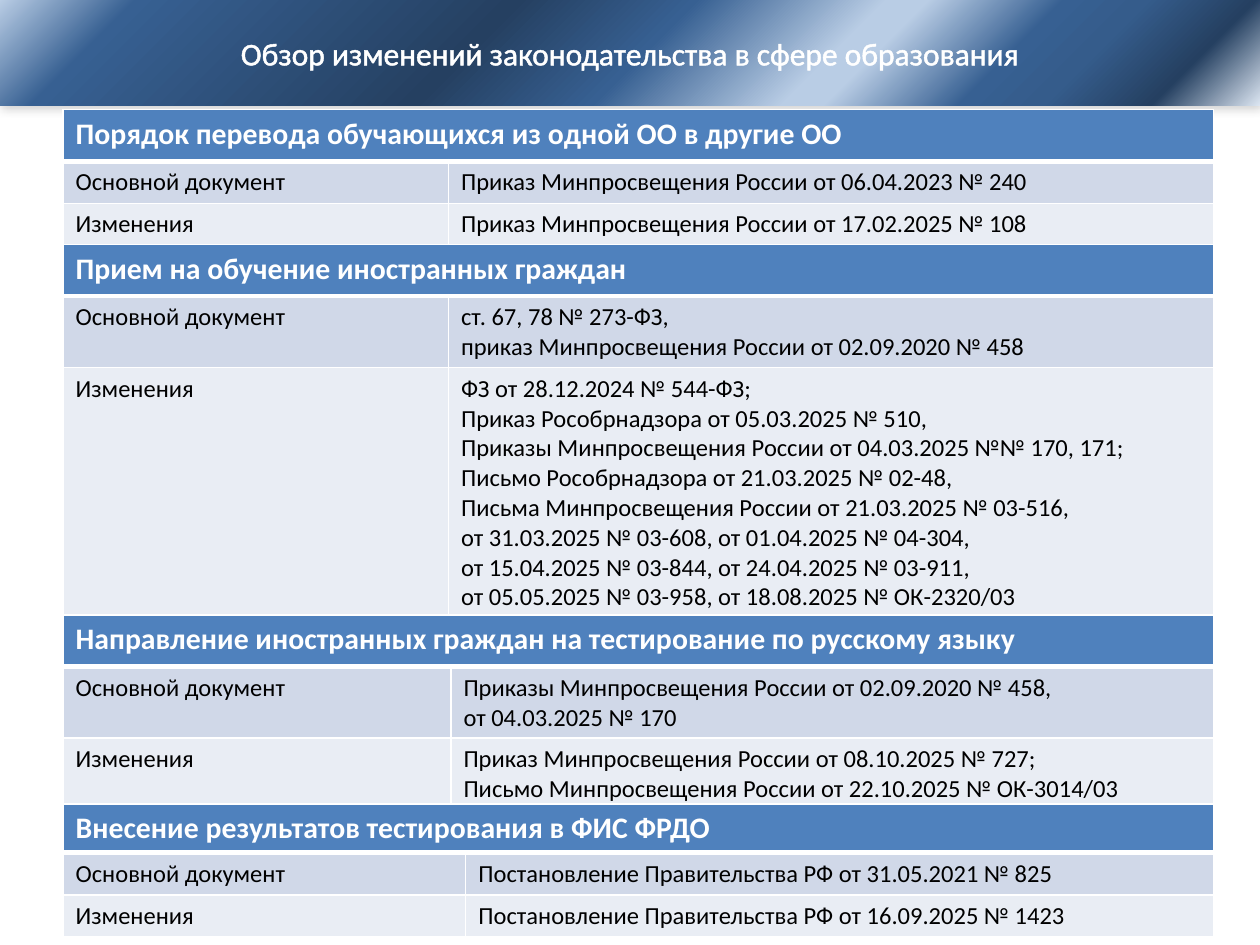
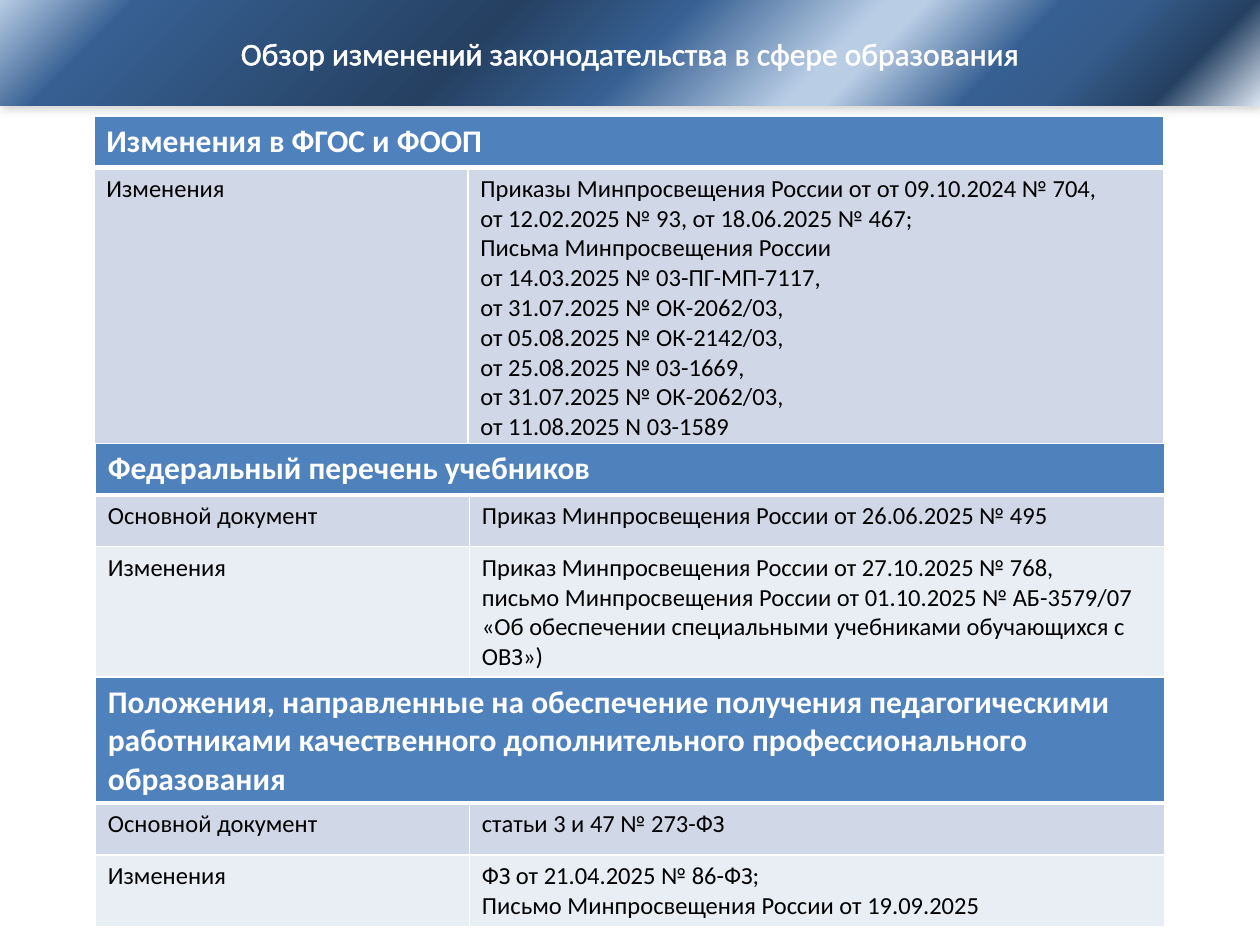
import pptx
import pptx.dml.color
import pptx.enum.shapes
import pptx.enum.text
import pptx.oxml
import pptx.oxml.ns
import pptx.util
from pptx.dml.color import RGBColor
from pptx.util import Cm

# Shared style
FONT = "Calibri"
WHITE = RGBColor(0xFF, 0xFF, 0xFF)
BLACK = RGBColor(0x00, 0x00, 0x00)
HEADER_BLUE = RGBColor(0x4F, 0x81, 0xBD)
ROW_FILLS = [RGBColor(0xD0, 0xD8, 0xE8), RGBColor(0xE9, 0xED, 0xF4)]
BAND_STOPS = [
    (0, RGBColor(0xB9, 0xCD, 0xE5)), (10, RGBColor(0x37, 0x60, 0x92)),
    (38, RGBColor(0x25, 0x40, 0x61)), (51, RGBColor(0x37, 0x60, 0x92)),
    (65, RGBColor(0xB9, 0xCD, 0xE5)), (68, RGBColor(0xB9, 0xCD, 0xE5)),
    (78, RGBColor(0x37, 0x60, 0x92)), (84, RGBColor(0x35, 0x5C, 0x8B)),
    (92, RGBColor(0x25, 0x40, 0x61)), (100, RGBColor(0xDC, 0xE6, 0xF2)),
]
PAGE_WIDTH, PAGE_HEIGHT = Cm(25.4), Cm(19.05)
BAND_HEIGHT = Cm(2.13)
TITLE = "Обзор изменений законодательства в сфере образования"
MAIN = "Основной документ"
CHANGES = "Изменения"

# Tables: left, top, column widths, row heights (cm), heading size, heading, rows
TRANSFER = (1.27, 2.21, (7.77, 15.42), (1.04, 0.81, 0.79), 17,
            "Порядок перевода обучающихся из одной ОО в другие ОО", [
    (MAIN, ["Приказ Минпросвещения России от 06.04.2023 № 240"]),
    (CHANGES, ["Приказ Минпросвещения России от 17.02.2025 № 108"]),
])
ADMISSION = (1.27, 4.93, (7.77, 15.42), (1.04, 1.43, 5.0), 17,
             "Прием на обучение иностранных граждан", [
    (MAIN, ["ст. 67, 78 № 273-ФЗ,",
            "приказ Минпросвещения России от 02.09.2020 № 458"]),
    (CHANGES, ["ФЗ от 28.12.2024 № 544-ФЗ;",
               "Приказ Рособрнадзора от 05.03.2025 № 510,",
               "Приказы Минпросвещения России от 04.03.2025 №№ 170, 171;",
               "Письмо Рособрнадзора от 21.03.2025 № 02-48,",
               "Письма Минпросвещения России от 21.03.2025 № 03-516,",
               "от 31.03.2025 № 03-608, от 01.04.2025 № 04-304,",
               "от 15.04.2025 № 03-844, от 24.04.2025 № 03-911,",
               "от 05.05.2025 № 03-958, от 18.08.2025 № ОК-2320/03"]),
])
TESTING = (1.27, 12.4, (7.82, 15.37), (1.04, 1.43, 1.43), 17,
           "Направление иностранных граждан на тестирование по русскому языку", [
    (MAIN, ["Приказы Минпросвещения России от 02.09.2020 № 458,",
            "от 04.03.2025 № 170"]),
    (CHANGES, ["Приказ Минпросвещения России от 08.10.2025 № 727;",
               "Письмо Минпросвещения России от 22.10.2025 № ОК-3014/03"]),
])
RESULTS = (1.27, 16.21, (8.12, 15.07), (0.98, 0.83, 0.83), 17,
           "Внесение результатов тестирования в ФИС ФРДО", [
    (MAIN, ["Постановление Правительства РФ от 31.05.2021 № 825"]),
    (CHANGES, ["Постановление Правительства РФ от 16.09.2025 № 1423"]),
])
STANDARDS = (1.89, 2.34, (7.54, 14.02), (1.04, 5.58), 18,
             "Изменения в ФГОС и ФООП", [
    (CHANGES, ["Приказы Минпросвещения России от от 09.10.2024 № 704,",
               "от 12.02.2025 № 93, от 18.06.2025 № 467;",
               "Письма Минпросвещения России",
               "от 14.03.2025 № 03-ПГ-МП-7117,",
               "от 31.07.2025 № ОК-2062/03,",
               "от 05.08.2025 № ОК-2142/03,",
               "от 25.08.2025 № 03-1669,",
               "от 31.07.2025 № ОК-2062/03,",
               "от 11.08.2025 N 03-1589"]),
])
TRAINING = (1.92, 13.65, (7.54, 14.02), (2.52, 1.04, 1.44), 18,
            "Положения, направленные на обеспечение получения педагогическими "
            "работниками качественного дополнительного профессионального образования", [
    (MAIN, ["статьи 3 и 47 № 273-ФЗ"]),
    (CHANGES, ["ФЗ от 21.04.2025 № 86-ФЗ;",
               "Письмо Минпросвещения России от 19.09.2025"]),
])
TEXTBOOKS = (1.92, 8.94, (7.54, 14.02), (1.04, 1.04, 2.6), 18,
             "Федеральный перечень учебников", [
    (MAIN, ["Приказ Минпросвещения России от 26.06.2025 № 495"]),
    (CHANGES, ["Приказ Минпросвещения России от 27.10.2025 № 768,",
               "письмо Минпросвещения России от 01.10.2025 № АБ-3579/07 "
               "«Об обеспечении специальными учебниками обучающихся с ОВЗ»)"]),
])
PAGES = [[TRANSFER, ADMISSION, TESTING, RESULTS], [STANDARDS, TRAINING, TEXTBOOKS]]


def xml(tag, inner="", attributes=""):
    """Build one DrawingML element."""
    space = pptx.oxml.ns.nsdecls("a")
    return pptx.oxml.parse_xml(f"<a:{tag} {space} {attributes}>{inner}</a:{tag}>")


def solid(color):
    return f'<a:solidFill><a:srgbClr val="{color}"/></a:solidFill>'


def write(frame, lines, size, color, bold=False, align=pptx.enum.text.PP_ALIGN.LEFT):
    """Fill a text frame with one paragraph per line."""
    for number, line in enumerate(lines):
        para = frame.add_paragraph() if number else frame.paragraphs[0]
        para.text = line
        para.alignment = align
        para.font.name = FONT
        para.font.size = pptx.util.Pt(size)
        para.font.bold = bold
        para.font.color.rgb = color


def add_band(page):
    """Gradient strip with a soft shadow across the top."""
    band = page.shapes.add_shape(pptx.enum.shapes.MSO_SHAPE.RECTANGLE,
                                 0, 0, PAGE_WIDTH, BAND_HEIGHT)
    band.line.fill.background()
    band.shadow.inherit = False
    band.fill.gradient()
    band.fill.gradient_angle = 0
    gradient = band._element.spPr.find(pptx.oxml.ns.qn("a:gradFill"))
    stops = "".join(f'<a:gs pos="{place * 1000}"><a:srgbClr val="{color}"/></a:gs>'
                    for place, color in BAND_STOPS)
    gradient.replace(gradient.find(pptx.oxml.ns.qn("a:gsLst")), xml("gsLst", stops))
    direction = gradient.find(pptx.oxml.ns.qn("a:lin"))
    direction.set("ang", "2700000")
    direction.set("scaled", "0")
    effects = band._element.spPr.find(pptx.oxml.ns.qn("a:effectLst"))
    effects.append(xml("outerShdw",
                       '<a:srgbClr val="000000"><a:alpha val="20000"/></a:srgbClr>',
                       'blurRad="76200" dist="12700" dir="2700000"'))


def add_title(page):
    box = page.shapes.add_textbox(Cm(1.27), 0, Cm(22.86), BAND_HEIGHT)
    frame = box.text_frame
    frame.word_wrap = True
    frame.vertical_anchor = pptx.enum.text.MSO_ANCHOR.MIDDLE
    write(frame, [TITLE], 18, WHITE, align=pptx.enum.text.PP_ALIGN.CENTER)
    span = frame.paragraphs[0].runs[0]
    span._r.get_or_add_rPr().insert(0, xml("ln", solid(WHITE), 'w="18415"'))


def style_cell(cell, fill, bottom=1):
    """White borders (bottom width in points), then the fill."""
    properties = cell._tc.get_or_add_tcPr()
    for side, width in (("L", 1), ("R", 1), ("T", 1), ("B", bottom)):
        properties.append(xml(f"ln{side}", solid(WHITE), f'w="{width * 12700}"'))
    cell.fill.solid()
    cell.fill.fore_color.rgb = fill


def add_law_table(page, left, top, widths, heights, heading_size, heading, rows):
    """Heading row over both columns, then label and document rows."""
    table = page.shapes.add_table(len(heights), 2, Cm(left), Cm(top),
                                  Cm(sum(widths)), Cm(sum(heights))).table
    for column, width in zip(table.columns, widths):
        column.width = Cm(width)
    for row, height in zip(table.rows, heights):
        row.height = Cm(height)

    for column in range(2):
        style_cell(table.cell(0, column), HEADER_BLUE, bottom=3)
    table.cell(0, 0).merge(table.cell(0, 1))
    write(table.cell(0, 0).text_frame, [heading], heading_size, WHITE, bold=True)

    for number, (label, documents) in enumerate(rows):
        for column, lines in enumerate(([label], documents)):
            cell = table.cell(number + 1, column)
            style_cell(cell, ROW_FILLS[number % 2])
            write(cell.text_frame, lines, 14, BLACK)


def main():
    deck = pptx.Presentation()
    deck.slide_width, deck.slide_height = PAGE_WIDTH, PAGE_HEIGHT
    for tables in PAGES:
        page = deck.slides.add_slide(deck.slide_layouts[6])
        add_band(page)
        add_title(page)
        for table in tables:
            add_law_table(page, *table)
    deck.save("out.pptx")


if __name__ == "__main__":
    main()
